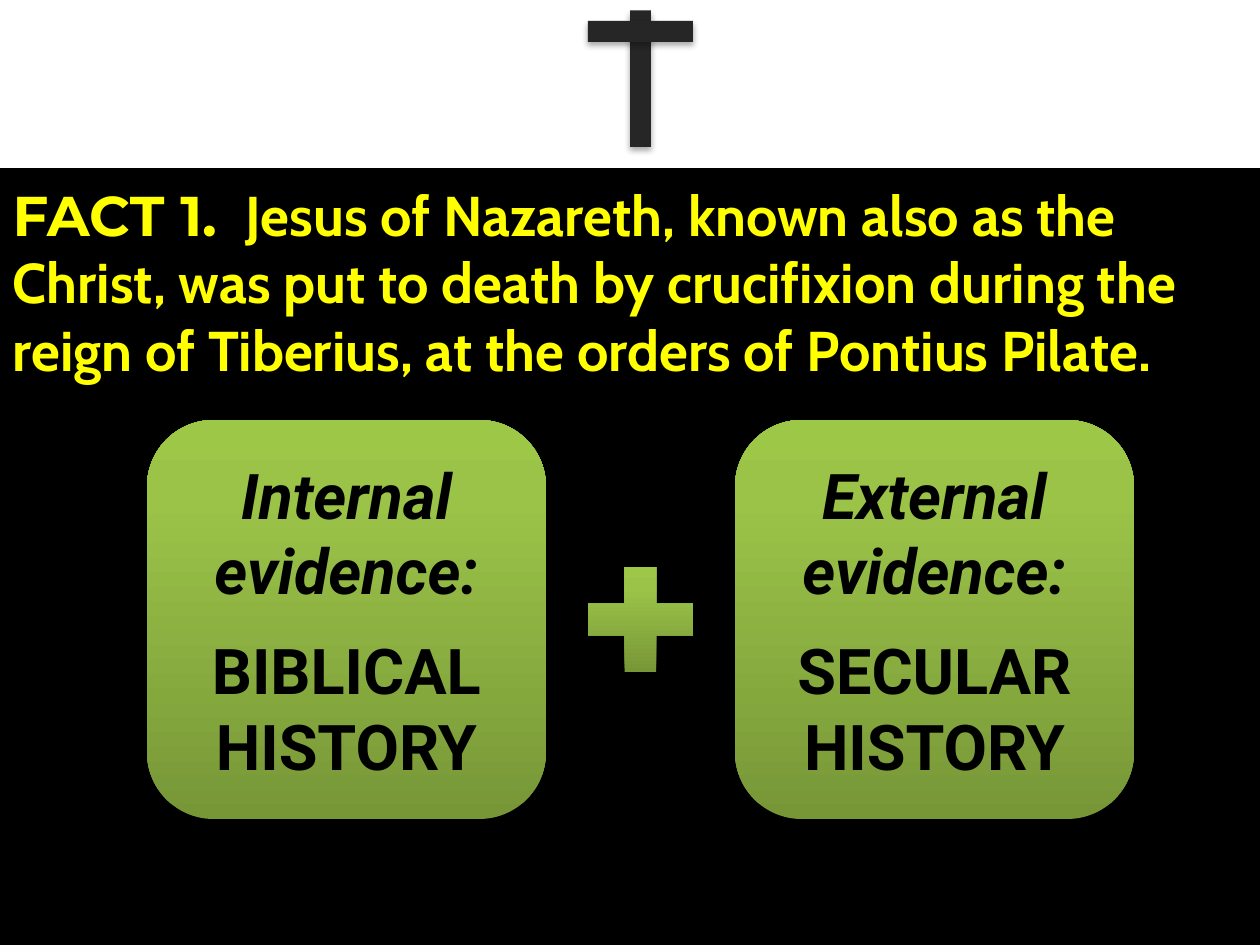
from lxml.etree import SubElement
from pptx import Presentation
from pptx.dml.color import RGBColor
from pptx.enum.shapes import MSO_SHAPE
from pptx.enum.text import MSO_ANCHOR, MSO_AUTO_SIZE, PP_ALIGN
from pptx.oxml import parse_xml
from pptx.oxml.ns import nsdecls, qn
from pptx.util import Pt

THEME = {
    "black": RGBColor(0, 0, 0),
    "yellow": RGBColor(0xFF, 0xFF, 0),
    "cross": RGBColor(0x26, 0x26, 0x26),
    "green_stops": [(0, "779737"), (80, "9BC348"), (100, "9DC746")],
    "title_size": 32,
    "box_size": 36,
}

TITLE = [
    ("FACT 1. ", "Montserrat"),
    ("\u00a0Jesus of Nazareth, known also as the Christ, was put to death by "
     "crucifixion during the reign of Tiberius, at the orders of Pontius Pilate.",
     "Cabin"),
]
# Each box: italic heading lines, then upright source lines
BOXES = [
    (["Internal", "evidence:"], ["BIBLICAL", "HISTORY"]),
    (["External", "evidence:"], ["SECULAR HISTORY"]),
]

SLIDE_W, SLIDE_H = 720, 540
TITLE_TOP = 96
CROSS_BARS = [(360, 6, 12, 78), (336, 12, 60, 12)]
BOX_LEFT, BOX_TOP, BOX_SIZE = 84, 240, 228
PLUS_SIZE, GAP = 60, 24
SOURCE_GAP = 14


def add_shadow(sp, alpha, blur, dist):
    sp.shadow.inherit = False
    effects = sp._element.spPr.find(qn("a:effectLst"))
    shadow = SubElement(effects, qn("a:outerShdw"), blurRad=str(Pt(blur)),
                        dist=str(Pt(dist)), dir="5400000", rotWithShape="0")
    color = SubElement(shadow, qn("a:srgbClr"), val="000000")
    SubElement(color, qn("a:alpha"), val=str(alpha * 1000))


def fill_green(sp):
    """Fill with the three-stop gradient, running from bottom to top."""
    stops = "".join(f'<a:gs pos="{pos * 1000}"><a:srgbClr val="{color}"/></a:gs>'
                    for pos, color in THEME["green_stops"])
    grad = parse_xml(f'<a:gradFill {nsdecls("a")} rotWithShape="1">'
                     f'<a:gsLst>{stops}</a:gsLst>'
                     '<a:lin ang="16200000" scaled="0"/></a:gradFill>')
    sp._element.spPr.find(qn("a:prstGeom")).addnext(grad)


def add_shape(shapes, kind, x, y, w, h):
    sp = shapes.add_shape(kind, Pt(x), Pt(y), Pt(w), Pt(h))
    sp.line.fill.background()
    return sp


def add_green(shapes, kind, x, y, size):
    sp = add_shape(shapes, kind, x, y, size, size)
    fill_green(sp)
    add_shadow(sp, 35, 3.1, 1.8)
    return sp


def write_box(sp, heading, source):
    tf = sp.text_frame
    tf.word_wrap = True
    tf.vertical_anchor = MSO_ANCHOR.MIDDLE
    tf.text = "\n".join(heading + source)
    for i, p in enumerate(tf.paragraphs):
        p.alignment = PP_ALIGN.CENTER
        p.font.name = "Roboto"
        p.font.size = Pt(THEME["box_size"])
        p.font.bold = True
        p.font.italic = i < len(heading)
        p.font.color.rgb = THEME["black"]
        if i == len(heading):
            p.space_before = Pt(SOURCE_GAP)


def set_title(title):
    title.left, title.top = Pt(0), Pt(TITLE_TOP)
    title.width, title.height = Pt(SLIDE_W), Pt(SLIDE_H - TITLE_TOP)
    title.fill.solid()
    title.fill.fore_color.rgb = THEME["black"]
    tf = title.text_frame
    tf.word_wrap = True
    tf.auto_size = MSO_AUTO_SIZE.NONE
    tf.vertical_anchor = MSO_ANCHOR.TOP
    tf.margin_top = Pt(7.2)
    p = tf.paragraphs[0]
    p.alignment = PP_ALIGN.LEFT
    for text, font in TITLE:
        r = p.add_run()
        r.text = text
        r.font.name = font
        r.font.size = Pt(THEME["title_size"])
        r.font.bold = True
        r.font.color.rgb = THEME["yellow"]


def main():
    prs = Presentation()
    prs.slide_width, prs.slide_height = Pt(SLIDE_W), Pt(SLIDE_H)
    s = prs.slides.add_slide(prs.slide_layouts[5])
    set_title(s.shapes.title)

    for bar in CROSS_BARS:
        sp = add_shape(s.shapes, MSO_SHAPE.RECTANGLE, *bar)
        sp.fill.solid()
        sp.fill.fore_color.rgb = THEME["cross"]
        add_shadow(sp, 32, 3.5, 2.2)

    group = s.shapes.add_group_shape()
    step = BOX_SIZE + PLUS_SIZE + 2 * GAP
    for i, (heading, source) in enumerate(BOXES):
        sp = add_green(group.shapes, MSO_SHAPE.ROUNDED_RECTANGLE,
                       BOX_LEFT + i * step, BOX_TOP, BOX_SIZE)
        write_box(sp, heading, source)
    plus = add_green(group.shapes, MSO_SHAPE.CROSS, BOX_LEFT + BOX_SIZE + GAP,
                     BOX_TOP + (BOX_SIZE - PLUS_SIZE) / 2, PLUS_SIZE)
    plus.adjustments[0] = 0.35

    prs.save("out.pptx")


if __name__ == "__main__":
    main()
